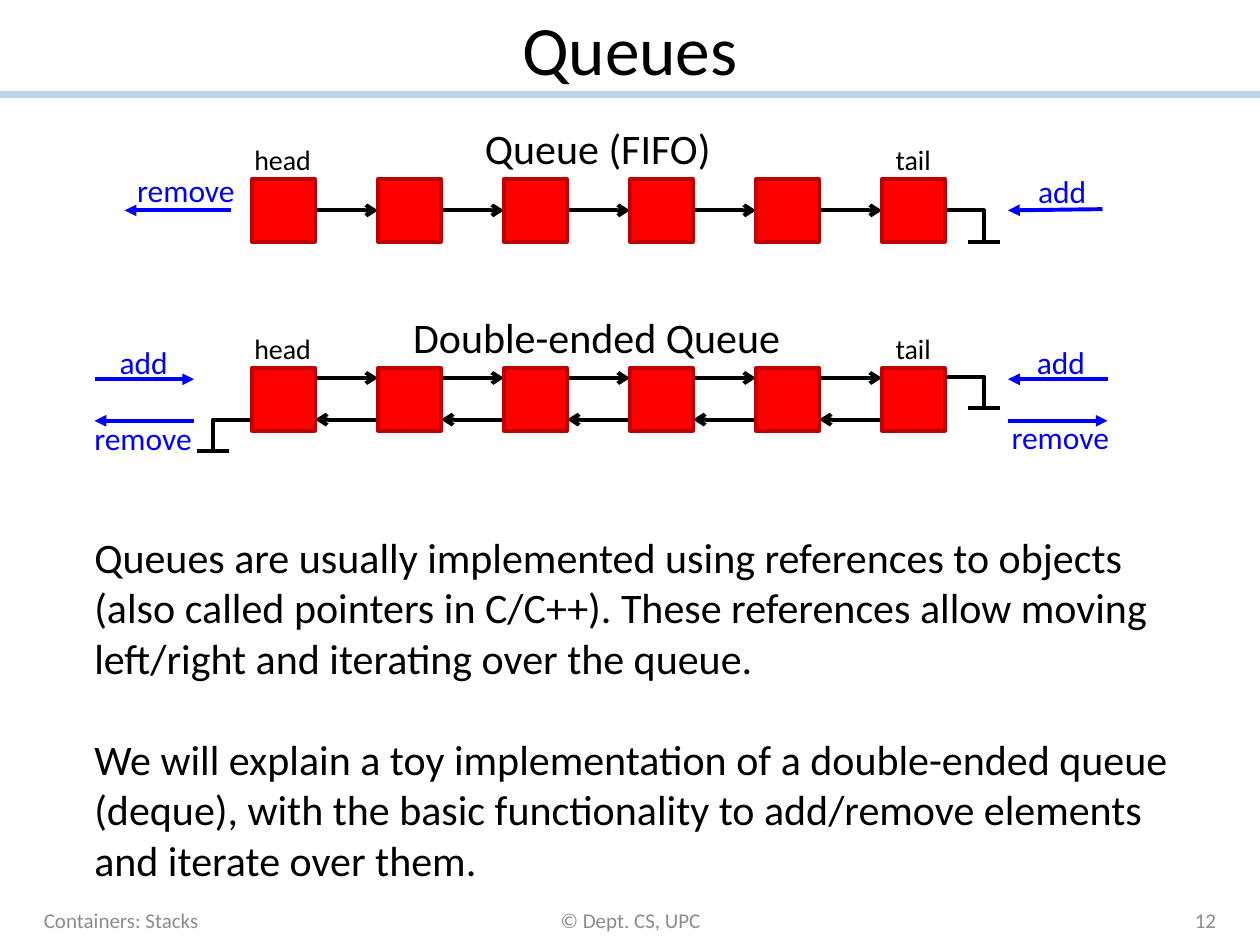
from lxml import etree
from pptx import Presentation
from pptx import util as u
from pptx.dml.color import RGBColor
from pptx.enum import shapes, text
from pptx.oxml.ns import qn

WIDTH, HEIGHT = 10, 7.5
BLACK, BLUE, RED, DARK_RED = "000000", "0000FF", "FF0000", "C00000"
GREY, PALE_BLUE = "8C8C8C", "C2D1ED"
LEFT, CENTER, RIGHT = text.PP_ALIGN.LEFT, text.PP_ALIGN.CENTER, text.PP_ALIGN.RIGHT

# Nodes sit on a grid of one-inch columns
NODES, FIRST, PITCH, SIDE = 6, 2, 1, 0.5
FIFO_TOP, DEQUE_TOP = 1.42, 2.92
FIFO_LINK = FIFO_TOP + SIDE / 2
NEXT_LINK, PREV_LINK = DEQUE_TOP + 0.08, DEQUE_TOP + 0.41
LAST_EDGE = FIRST + (NODES - 1) * PITCH + SIDE

PARAGRAPHS = [
    "Queues are usually implemented using references to objects\v"
    "(also called pointers in C/C++). These references allow moving\v"
    "left/right and iterating over the queue.",
    "We will explain a toy implementation of a double-ended queue\v"
    "(deque), with the basic functionality to add/remove elements\v"
    "and iterate over them.",
]
FOOTERS = [
    ("Containers: Stacks", 0.25, 2.33, LEFT),
    ("© Dept. CS, UPC", 3.42, 3.17, CENTER),
    ("12", 7.42, 2.33, RIGHT),
]
HEADINGS = [("Queue (FIFO)", 3.75, 0.92, 2.01), ("Double-ended Queue", 3.18, 2.42, 3.15)]
END_LABELS = [("head", 1.92, 0.66), ("tail", 7.01, 0.48)]
# label, left, top, width
OPERATIONS = [
    ("remove", 0.99, 1.31, 0.98),
    ("add", 8.14, 1.32, 0.59),
    ("add", 0.85, 2.67, 0.59),
    ("remove", 0.65, 3.28, 0.98),
    ("add", 8.13, 2.67, 0.59),
    ("remove", 7.93, 3.27, 0.98),
]
# x and y of the start, x and y of the tip
OPERATION_ARROWS = [
    (1.83, 1.67, 0.99, 1.67),
    (8.75, 1.66, 8, 1.67),
    (0.75, 3.01, 1.54, 3.01),
    (1.54, 3.34, 0.75, 3.34),
    (8.79, 3.01, 8, 3.01),
    (8, 3.34, 8.79, 3.34),
]
# start of the wire and its horizontal direction
GROUNDS = [(LAST_EDGE, FIFO_LINK, 1), (LAST_EDGE, DEQUE_TOP + 0.07, 1), (FIRST, PREV_LINK, -1)]

prs = Presentation()
prs.slide_width, prs.slide_height = u.Inches(WIDTH), u.Inches(HEIGHT)
slide = prs.slides.add_slide(prs.slide_layouts[6])


def rgb(color):
    return RGBColor.from_string(color)


def inches(*lengths):
    return [u.Inches(length) for length in lengths]


def set_line(s, color, width):
    s.line.color.rgb = rgb(color)
    s.line.width = u.Pt(width)


def add_text(paragraphs, left, top, width, height, size, color=BLACK,
             align=LEFT, anchor=text.MSO_ANCHOR.TOP, wrap=False, gap=0):
    box = slide.shapes.add_textbox(*inches(left, top, width, height))
    tf = box.text_frame
    tf.word_wrap = wrap
    tf.vertical_anchor = anchor
    for i, content in enumerate(paragraphs):
        p = tf.add_paragraph() if i else tf.paragraphs[0]
        p.text = content
        p.alignment = align
        if i:
            p.space_before = u.Pt(gap)
        for r in p.runs:
            r.font.name, r.font.size = "Calibri", u.Pt(size)
            r.font.color.rgb = rgb(color)


def add_line(x1, y1, x2, y2, color=BLACK, width=2.25, tip=None):
    s = slide.shapes.add_connector(shapes.MSO_CONNECTOR.STRAIGHT, *inches(x1, y1, x2, y2))
    set_line(s, color, width)
    if tip:
        etree.SubElement(s.line._get_or_add_ln(), qn("a:tailEnd"), type=tip)
    etree.SubElement(s._element.spPr, qn("a:effectLst"))


def add_ground(x, y, direction):
    """Draw the null reference: a bent wire that ends on a short bar."""
    corner, drop, half_bar = x + 0.31 * direction, 0.25, 0.125
    builder = slide.shapes.build_freeform(u.Inches(x), u.Inches(y))
    builder.add_line_segments([inches(corner, y), inches(corner, y + drop)], close=False)
    wire = builder.convert_to_shape()
    wire.shadow.inherit = False
    wire.fill.background()
    set_line(wire, BLACK, 2.25)
    add_line(corner - half_bar, y + drop, corner + half_bar, y + drop)


add_line(0, 0.75, WIDTH, 0.75, PALE_BLUE, 4)
add_text(["Queues"], 0.5, 0, 9, 0.75, 39.6, align=CENTER,
         anchor=text.MSO_ANCHOR.MIDDLE, wrap=True)
for label, left, width, align in FOOTERS:
    add_text([label], left, 7.1, width, 0.4, 12, GREY, align,
             text.MSO_ANCHOR.MIDDLE, wrap=True)

for ground in GROUNDS:
    add_ground(*ground)
for i in range(NODES - 1):
    start = FIRST + i * PITCH + SIDE
    end = FIRST + (i + 1) * PITCH
    add_line(start, FIFO_LINK, end, FIFO_LINK, tip="arrow")
    add_line(start, NEXT_LINK, end, NEXT_LINK, tip="arrow")
    add_line(end, PREV_LINK, start, PREV_LINK, tip="arrow")

for top in (FIFO_TOP, DEQUE_TOP):
    for i in range(NODES):
        node = slide.shapes.add_shape(
            shapes.MSO_SHAPE.RECTANGLE, *inches(FIRST + i * PITCH, top, SIDE, SIDE))
        node.shadow.inherit = False
        node.fill.solid()
        node.fill.fore_color.rgb = rgb(RED)
        set_line(node, DARK_RED, 2)
    for label, left, width in END_LABELS:
        add_text([label], left, top - 0.34, width, 0.37, 16)

for arrow in OPERATION_ARROWS:
    add_line(*arrow, color=BLUE, tip="triangle")
for label, left, top, width in OPERATIONS:
    add_text([label], left, top, width, 0.4, 18, BLUE)
for label, left, top, width in HEADINGS:
    add_text([label], left, top, width, 0.5, 24)
add_text(PARAGRAPHS, 0.65, 4.17, 8.89, 2.93, 24, gap=29)

prs.save("out.pptx")
